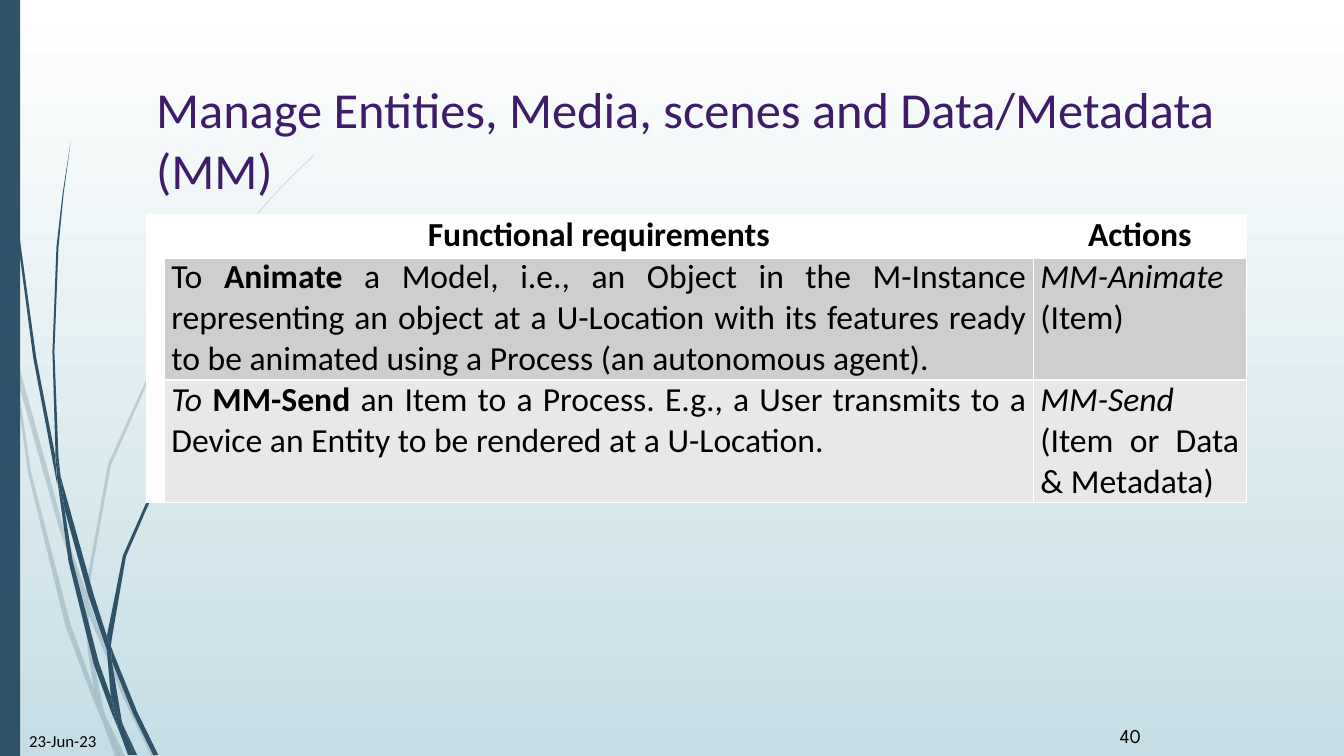
from lxml import etree
from pptx import Presentation
from pptx.dml.color import RGBColor
from pptx.enum.shapes import MSO_SHAPE
from pptx.enum.text import MSO_ANCHOR, PP_ALIGN
from pptx.oxml.ns import qn
from pptx.util import Pt

EMU_PER_PX = 9144
RECTANGLE = MSO_SHAPE.RECTANGLE
TOP, MIDDLE = MSO_ANCHOR.TOP, MSO_ANCHOR.MIDDLE
LEFT, CENTER, JUSTIFY = PP_ALIGN.LEFT, PP_ALIGN.CENTER, PP_ALIGN.JUSTIFY
FONT = "Calibri"
COLORS = {
    "white": "FFFFFF",
    "sky": "C5DEE5",
    "stem": "2E5369",
    "title": "3F1C6A",
    "text": "000000",
    "dark_row": "CECECE",
    "light_row": "E8E8E8",
}

FADED_STEMS = [
    [(11, 350), (9, 322), (0, 282), (0, 299), (10, 344)],
    [(58, 522), (84, 599), (85, 586), (62, 520), (14, 345), (17, 376)],
    [(92, 607), (88, 596), (88, 610), (123, 694), (150, 750), (155, 750), (127, 692)],
    [(119, 750), (124, 750), (105, 711)],
    [(93, 683), (70, 619), (31, 469), (17, 376), (11, 350), (28, 470), (65, 621),
     (92, 693), (101, 714), (99, 707)],
    [(84, 599), (87, 646), (93, 683), (96, 692), (105, 711), (103, 706), (91, 646),
     (88, 610), (88, 608)],
    [(88, 584), (110, 462), (160, 349), (229, 245), (268, 198), (290, 175), (312, 154),
     (312, 153), (289, 175), (268, 197), (228, 244), (158, 348), (107, 461), (85, 584),
     (85, 586), (88, 596)],
    [(101, 714), (114, 750), (119, 750)],
    [(88, 608), (88, 610), (88, 596), (85, 586), (84, 599)],
    [(96, 692), (93, 683), (99, 707), (101, 714), (119, 750), (105, 711)],
]
SOLID_STEMS = [
    [(7, 110), (17, 233), (33, 355), (56, 477), (57, 481), (55, 457), (55, 453),
     (36, 355), (19, 232), (8, 109), (5, 48), (4, 0), (3, 0), (4, 48)],
    [(88, 592), (106, 645), (106, 633), (106, 631), (93, 590), (60, 472), (64, 505)],
    [(113, 649), (110, 641), (111, 656), (132, 708), (152, 749), (157, 749), (136, 706)],
    [(110, 691), (98, 657), (72, 556), (64, 505), (57, 477), (68, 557), (93, 659),
     (111, 708), (117, 722), (116, 717)],
    [(60, 472), (58, 453), (54, 349), (58, 245), (63, 193), (70, 141), (62, 193),
     (56, 245), (52, 349), (55, 449)],
    [(133, 749), (136, 749), (122, 719)],
    [(57, 477), (64, 505), (60, 472), (55, 449), (55, 453)],
    [(111, 633), (125, 552), (158, 476), (205, 406), (231, 374), (245, 359), (261, 344),
     (260, 344), (245, 358), (231, 373), (204, 405), (156, 474), (122, 551), (106, 631),
     (110, 641)],
    [(117, 722), (127, 749), (131, 749)],
    [(106, 645), (110, 691), (116, 706), (122, 719), (121, 716), (111, 656), (109, 651)],
    [(106, 645), (109, 651), (111, 656), (110, 641), (106, 631), (106, 633)],
    [(116, 706), (110, 691), (116, 717), (117, 722), (130, 749), (133, 749), (122, 719)],
]

COLUMN_WIDTHS = [18, 862, 211]
ROW_HEIGHTS = [42, 122, 122]
ROW_FILLS = ["white", "dark_row", "light_row"]
TABLE_ROWS = [
    [[], [("Functional requirements", "b")], [("Actions", "b")]],
    [
        [],
        [("To ", ""), ("Animate ", "b"),
         ("a Model, i.e., an Object in the M-Instance representing an object at a "
          "U-Location with its features ready to be animated using a Process "
          "(an autonomous agent).", "")],
        [("MM-Animate", "i"), (" (Item)", "")],
    ],
    [
        [],
        [("To ", "i"), ("MM-Send", "b"),
         (" an Item to a Process. E.g., a User transmits to a Device an Entity to be "
          "rendered at a U-Location.", "")],
        [("MM-Send", "i"), (" (Item or Data & Metadata)", "")],
    ],
]


def px(length):
    return length * EMU_PER_PX


def rgb(name):
    return RGBColor.from_string(COLORS[name])


def write_text(paragraph, text, size, color="text", font=FONT, bold=False, italic=False):
    run = paragraph.add_run()
    run.text = text
    run.font.size = Pt(size)
    run.font.name = font
    run.font.bold = bold
    run.font.italic = italic
    run.font.color.rgb = rgb(color)


def add_text(slide, text, left, top, width, height, anchor=TOP, **text_format):
    shape = slide.shapes.add_textbox(px(left), px(top), px(width), px(height))
    frame = shape.text_frame
    frame.word_wrap = True
    frame.vertical_anchor = anchor
    paragraph = frame.paragraphs[0]
    paragraph.alignment = LEFT
    for index, line in enumerate(text.split("\n")):
        if index:
            paragraph.add_line_break()
        write_text(paragraph, line, **text_format)


def paint_shape(shape, color, opacity=100):
    shape.shadow.inherit = False
    shape.line.fill.background()
    shape.fill.solid()
    shape.fill.fore_color.rgb = rgb(color)
    if opacity < 100:
        color_element = shape.fill._xPr.find(qn("a:solidFill"))[0]
        etree.SubElement(color_element, qn("a:alpha"), val=str(opacity * 1000))


def add_stem(slide, points, opacity):
    builder = slide.shapes.build_freeform(*points[0], scale=EMU_PER_PX)
    builder.add_line_segments(points[1:], close=True)
    paint_shape(builder.convert_to_shape(), "stem", opacity)


def set_borders(cell, bottom_width):
    properties = cell._tc.get_or_add_tcPr()
    for side, width in (("L", 1), ("R", 1), ("T", 1), ("B", bottom_width)):
        line = etree.SubElement(properties, qn(f"a:ln{side}"), w=str(Pt(width)))
        fill = etree.SubElement(line, qn("a:solidFill"))
        etree.SubElement(fill, qn("a:srgbClr"), val=COLORS["white"])


def fill_cell(cell, runs, color, alignment, bottom_width):
    set_borders(cell, bottom_width)
    cell.fill.solid()
    cell.fill.fore_color.rgb = rgb(color)
    cell.margin_left = cell.margin_right = px(7)
    cell.margin_top = cell.margin_bottom = 0
    paragraph = cell.text_frame.paragraphs[0]
    paragraph.alignment = alignment
    for text, style in runs:
        write_text(paragraph, text, 24, bold=style == "b", italic=style == "i")


def add_requirements_table(slide, left, top):
    table = slide.shapes.add_table(
        len(ROW_HEIGHTS), len(COLUMN_WIDTHS), px(left), px(top),
        px(sum(COLUMN_WIDTHS)), px(sum(ROW_HEIGHTS)),
    ).table
    table.first_row = table.horz_banding = False
    for column, width in zip(table.columns, COLUMN_WIDTHS):
        column.width = px(width)
    for row_index, (row, height) in enumerate(zip(table.rows, ROW_HEIGHTS)):
        row.height = px(height)
        alignment, bottom_width = (JUSTIFY, 1) if row_index else (CENTER, 3)
        for column_index, cell in enumerate(row.cells):
            color = ROW_FILLS[row_index] if column_index else "white"
            runs = TABLE_ROWS[row_index][column_index]
            fill_cell(cell, runs, color, alignment, bottom_width)


def set_background(slide):
    fill = slide.background.fill
    fill.gradient()
    fill.gradient_angle = 270
    for stop, color in zip(fill.gradient_stops, ("white", "sky")):
        stop.color.rgb = rgb(color)


def main():
    presentation = Presentation()
    presentation.slide_width, presentation.slide_height = px(1333), px(750)
    slide = presentation.slides.add_slide(presentation.slide_layouts[6])
    set_background(slide)
    for stems, opacity in ((FADED_STEMS, 20), (SOLID_STEMS, 100)):
        for points in stems:
            add_stem(slide, points, opacity)
    side_bar = slide.shapes.add_shape(RECTANGLE, 0, 0, px(20), px(750))
    paint_shape(side_bar, "stem")
    add_text(slide, "Manage Entities, Media, scenes and Data/Metadata\n(MM)",
             145, 68, 1114, 140, anchor=MIDDLE, size=36, color="title")
    add_text(slide, "23-Jun-23", 19, 720, 109, 30, size=12)
    add_text(slide, "40", 1101, 718, 61, 5, size=14, font="League Spartan")
    add_requirements_table(slide, 145, 213)
    presentation.save("out.pptx")


if __name__ == "__main__":
    main()
